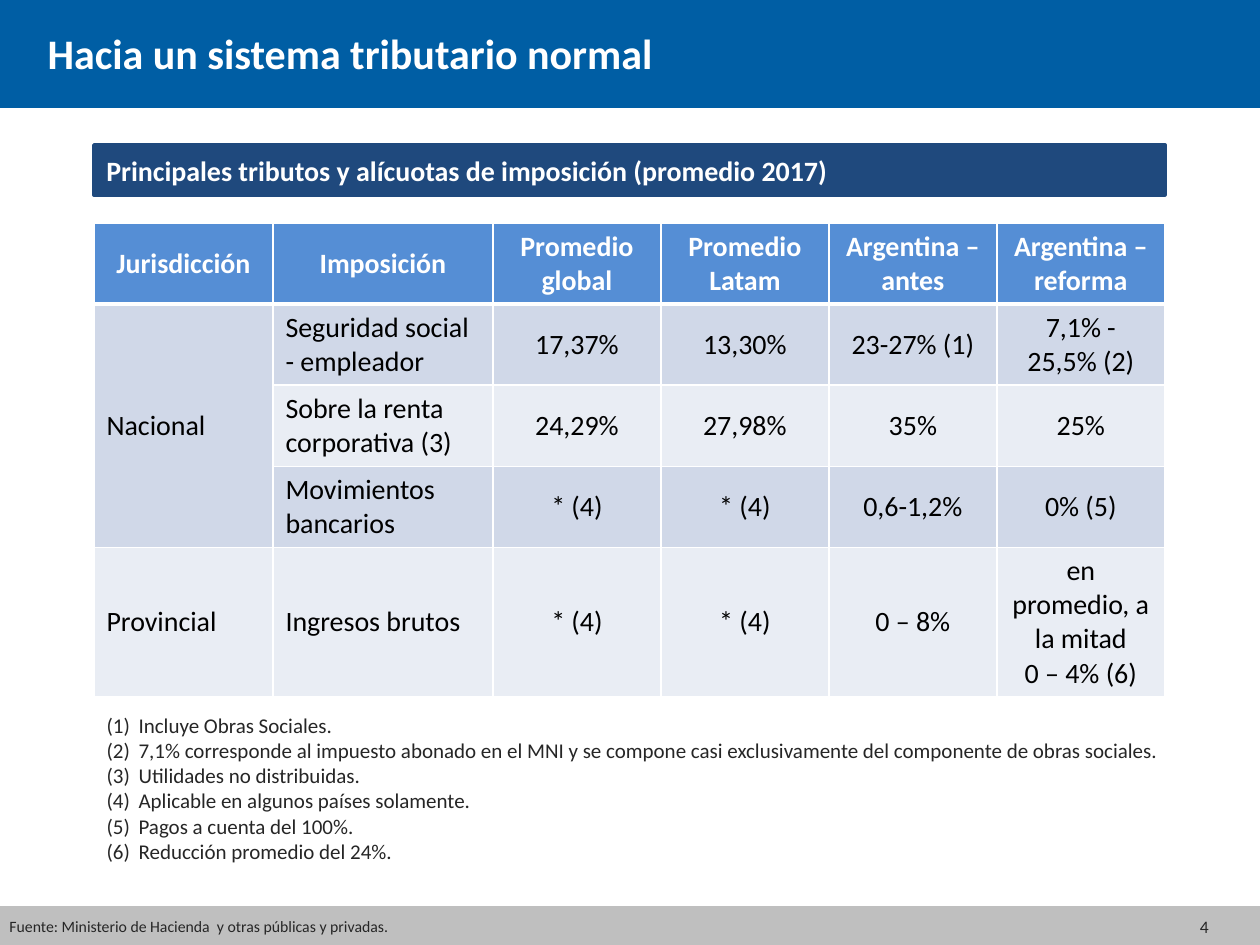
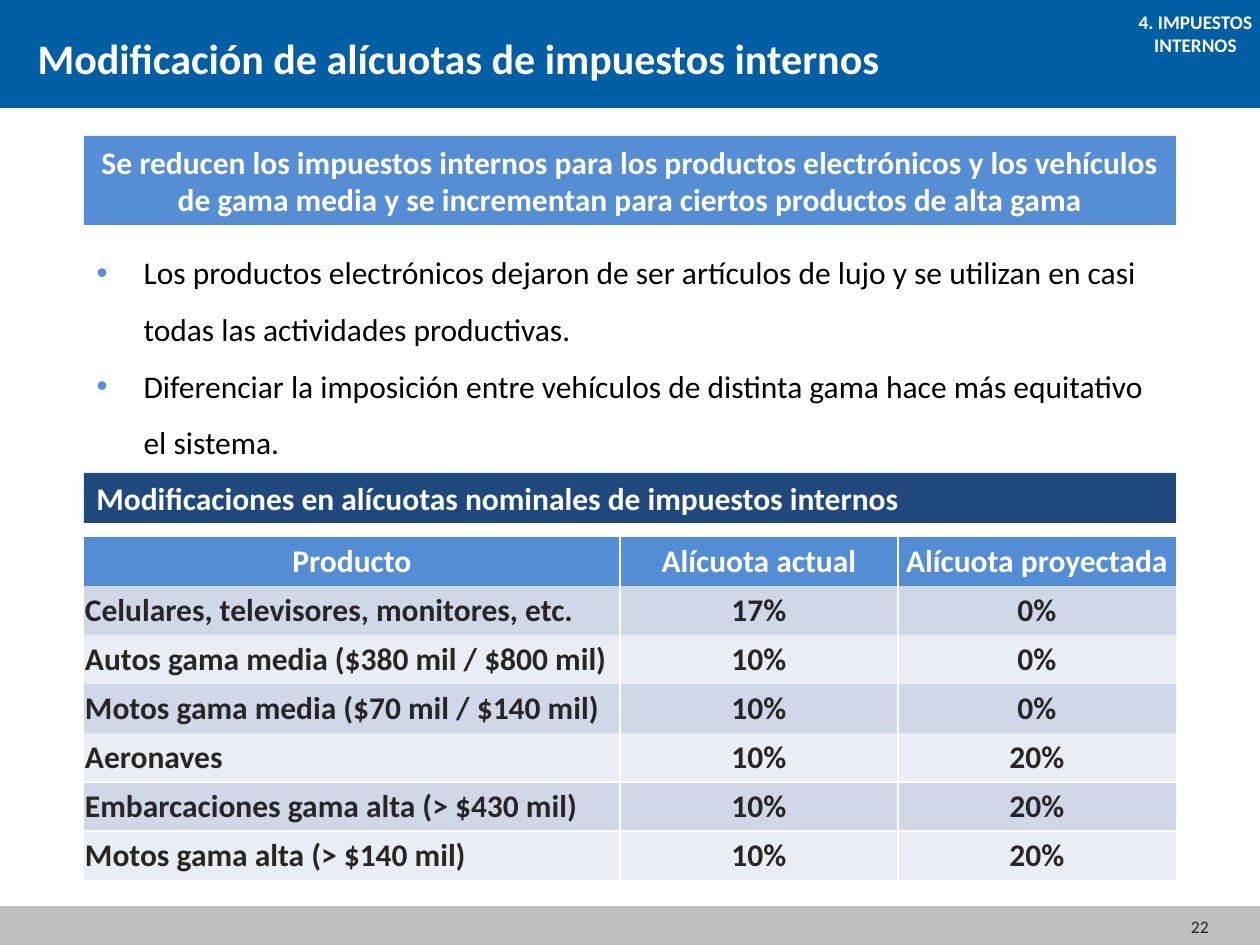
import dataclasses
import pptx
import pptx.util
import pptx.dml.color
import pptx.enum.shapes
import pptx.enum.text
import pptx.oxml
import pptx.oxml.ns

PX = 7257  # EMU per px, 126 px to the inch
RECT = pptx.enum.shapes.MSO_SHAPE.RECTANGLE
LEFT, CENTER, RIGHT = (getattr(pptx.enum.text.PP_ALIGN, n) for n in ("LEFT", "CENTER", "RIGHT"))
TOP, MIDDLE = pptx.enum.text.MSO_ANCHOR.TOP, pptx.enum.text.MSO_ANCHOR.MIDDLE


@dataclasses.dataclass(frozen=True)
class Theme:
    font: str = "Calibri"
    header: str = "005EA4"
    footer: str = "BFBFBF"
    navy: str = "1F497D"
    blue: str = "558ED5"
    blue_head: str = "538DD5"
    bands: tuple = ("E9EDF4", "D0D8E8")
    white: str = "FFFFFF"
    black: str = "000000"
    ink: str = "262626"
    title: int = 24
    large: int = 18
    medium: int = 16
    note: int = 12
    tag: int = 11
    number: int = 10
    source: int = 9


T = Theme()


def write(tf, lines, size, color, bold=False, align=LEFT, anchor=TOP, spacing=1.0):
    """Fill a text frame, one paragraph a line."""
    tf.word_wrap, tf.vertical_anchor = True, anchor
    for i, line in enumerate(lines):
        p = tf.paragraphs[0] if i == 0 else tf.add_paragraph()
        for name, value in {"alignment": align, "line_spacing": spacing,
                            "space_before": pptx.util.Pt(0)}.items():
            setattr(p, name, value)
        r = p.add_run()
        r.text = line
        for name, value in {"name": T.font, "size": pptx.util.Pt(size), "bold": bold}.items():
            setattr(r.font, name, value)
        r.font.color.rgb = pptx.dml.color.RGBColor.from_string(color)


def add_rect(slide, box, fill, outlined=False):
    """Add a flat rectangle, with a 2 pt line of its own colour if outlined."""
    s = slide.shapes.add_shape(RECT, *(v * PX for v in box))
    s.shadow.inherit = False
    s.fill.solid()
    s.fill.fore_color.rgb = pptx.dml.color.RGBColor.from_string(fill)
    if outlined:
        s.line.color.rgb = pptx.dml.color.RGBColor.from_string(fill)
        s.line.width = pptx.util.Pt(2)
    else:
        s.line.fill.background()
    return s


# Content
SLIDES = [
    {
        "title": ("Hacia un sistema tributario normal", (35, 21, 1191, 63)),
        "number": "4",
        "banners": [
            ("Principales tributos y alícuotas de imposición (promedio 2017)",
             (94, 145, 1071, 50), T.navy, True, T.medium, LEFT),
        ],
        "list": {
            "box": (94, 706, 1131, 165), "indent": 32, "size": T.note, "color": T.ink,
            "spacing": 1.0, "bullet": ['<a:buFont %s typeface="+mj-lt"/>',
                                       '<a:buAutoNum %s type="arabicParenBoth"/>'],
            "lines": [
                "Incluye Obras Sociales.",
                "7,1% corresponde al impuesto abonado en el MNI y se compone casi "
                "exclusivamente del componente de obras sociales.",
                "Utilidades no distribuidas.",
                "Aplicable en algunos países solamente.",
                "Pagos a cuenta del 100%.",
                "Reducción promedio del 24%.",
            ],
        },
        "texts": [("Fuente: Ministerio de Hacienda  y otras públicas y privadas.",
                   (-3, 911, 791, 32), T.source, T.ink, False, LEFT)],
        "table": {
            "at": (94, 223), "cols": [179, 220] + [168] * 4, "rows": [80] * 4 + [146],
            "head": T.blue, "size": T.medium, "color": T.black, "bold": False,
            "left_cols": 2, "margins": {}, "merge": (1, 0, 3, 0),
            "outer": True, "rules": {0: 1, 1: 3, 2: 1, 3: 1, 4: 1, 5: 1},
            "cells": [
                ["Jurisdicción", "Imposición", "Promedio global", "Promedio Latam",
                 "Argentina – antes", "Argentina – reforma"],
                ["Nacional", "Seguridad social - empleador", "17,37%", "13,30%",
                 "23-27% (1)", "7,1% - 25,5% (2)"],
                [None, "Sobre la renta corporativa (3)", "24,29%", "27,98%", "35%", "25%"],
                [None, "Movimientos bancarios", "* (4)", "* (4)", "0,6-1,2%", "0% (5)"],
                ["Provincial", "Ingresos brutos", "* (4)", "* (4)", "0 – 8%",
                 "en promedio, a la mitad\n0 – 4% (6)"],
            ],
        },
    },
    {
        "title": ("Modificación de alícuotas de impuestos internos", (25, 26, 1142, 63)),
        "number": "22",
        "banners": [
            ("Modificaciones en alícuotas nominales de impuestos internos",
             (84, 473, 1092, 50), T.navy, False, T.large, LEFT),
            ("Se reducen los impuestos internos para los productos electrónicos y los vehículos "
             "de gama media y se incrementan para ciertos productos de alta gama",
             (84, 136, 1092, 89), T.blue, False, T.large, CENTER),
        ],
        "list": {
            "box": (84, 228, 1092, 242), "indent": 47, "size": T.large, "color": T.black,
            "spacing": 1.5, "bullet": [f'<a:buClr %s><a:srgbClr val="{T.blue}"/></a:buClr>',
                                       '<a:buFont %s typeface="Arial"/>',
                                       '<a:buChar %s char="•"/>'],
            "lines": [
                "Los productos electrónicos dejaron de ser artículos de lujo y se utilizan "
                "en casi todas las actividades productivas.",
                "Diferenciar la imposición entre vehículos de distinta gama hace más "
                "equitativo el sistema.",
            ],
        },
        "texts": [("4. IMPUESTOS INTERNOS", (1116, 4, 159, 59), T.tag, T.white, True, CENTER)],
        "table": {
            "at": (84, 537), "cols": [536, 278, 278], "rows": [49] * 7,
            "head": T.blue_head, "size": T.large, "color": T.ink, "bold": True,
            "left_cols": 1, "merge": None, "outer": False, "rules": {5: 1, 6: 1},
            "margins": {"margin_left": PX, "margin_right": PX, "margin_top": PX,
                        "margin_bottom": 0},
            "cells": [
                ["Producto", "Alícuota actual", "Alícuota proyectada"],
                ["Celulares, televisores, monitores, etc.", "17%", "0%"],
                ["Autos gama media ($380 mil / $800 mil)", "10%", "0%"],
                ["Motos gama media ($70 mil / $140 mil)", "10%", "0%"],
                ["Aeronaves", "10%", "20%"],
                ["Embarcaciones gama alta (> $430 mil)", "10%", "20%"],
                ["Motos gama alta (> $140 mil)", "10%", "20%"],
            ],
        },
    },
]

prs = pptx.Presentation()
prs.slide_width, prs.slide_height = pptx.util.Inches(10), pptx.util.Inches(7.5)
NS = pptx.oxml.ns.nsdecls("a")

for n, data in enumerate(SLIDES):
    slide = prs.slides.add_slide(prs.slide_layouts[1])

    # Header and footer bands, kept on the master
    if n == 0:
        bands = [add_rect(slide, (0, 0, 1260, 108), T.header),
                 add_rect(slide, (0, 908, 1260, 37), T.footer, True)]
        for i, s in enumerate(bands):
            prs.slide_master.shapes._spTree.insert(2 + i, s._element)

    # Title and list placeholders
    title, title_box = data["title"]
    items = data["list"]
    body = slide.placeholders[1]
    for s, box in ((slide.shapes.title, title_box), (body, items["box"])):
        for name, value in zip(("left", "top", "width", "height"), box):
            setattr(s, name, value * PX)
        s.text_frame.auto_size = pptx.enum.text.MSO_AUTO_SIZE.NONE
    write(slide.shapes.title.text_frame, [title], T.title, T.white, True)
    write(body.text_frame, items["lines"], items["size"], items["color"],
          spacing=items["spacing"])
    for p in body.text_frame.paragraphs:
        pPr = p._p.get_or_add_pPr()
        pPr.set("marL", str(items["indent"] * PX))
        pPr.set("indent", str(-items["indent"] * PX))
        for xml in items["bullet"]:
            pPr.append(pptx.oxml.parse_xml(xml % NS))

    # Banners
    for text, box, fill, outlined, size, align in data["banners"]:
        s = add_rect(slide, box, fill, outlined)
        write(s.text_frame, [text], size, T.white, True, align, MIDDLE)

    # Table
    t = data["table"]
    cols, rows = t["cols"], t["rows"]
    table = slide.shapes.add_table(len(rows), len(cols), *(v * PX for v in t["at"]),
                                   sum(cols) * PX, sum(rows) * PX).table
    table._tbl.tblPr[0].text = "{2D5ABB26-0587-4C30-8999-92F81FD0307C}"  # no style, no grid
    for col, width in zip(table.columns, cols):
        col.width = width * PX
    for row, height in zip(table.rows, rows):
        row.height = height * PX
    if t["merge"]:
        r0, c0, r1, c1 = t["merge"]
        table.cell(r0, c0).merge(table.cell(r1, c1))
    for i, texts in enumerate(t["cells"]):
        for j, text in enumerate(texts):
            cell = table.cell(i, j)
            borders = {"lnL": int(t["outer"] or j > 0),
                       "lnR": int(t["outer"] or j < len(cols) - 1),
                       "lnT": t["rules"].get(i, 0), "lnB": t["rules"].get(i + 1, 0)}
            tcPr = cell._tc.get_or_add_tcPr()
            for side, width in borders.items():
                if width:
                    tcPr.append(pptx.oxml.parse_xml(
                        f'<a:{side} {NS} w="{width * 12700}"><a:solidFill>'
                        f'<a:srgbClr val="{T.white}"/></a:solidFill></a:{side}>'))
            cell.fill.solid()
            cell.fill.fore_color.rgb = pptx.dml.color.RGBColor.from_string(
                T.bands[i % 2] if i else t["head"])
            for name, value in t["margins"].items():
                setattr(cell, name, value)
            cell.vertical_anchor = MIDDLE
            if text:
                write(cell.text_frame, text.split("\n"), t["size"],
                      t["color"] if i else T.white, t["bold"] or i == 0,
                      LEFT if i and j < t["left_cols"] else CENTER, MIDDLE)

    # Small texts and slide number
    number = (data["number"], (927, 902, 294, 50), T.number, T.ink, False, RIGHT)
    for text, box, size, color, bold, align in data["texts"] + [number]:
        s = slide.shapes.add_textbox(*(v * PX for v in box))
        write(s.text_frame, [text], size, color, bold, align,
              MIDDLE if align == RIGHT else TOP)

prs.save("out.pptx")
